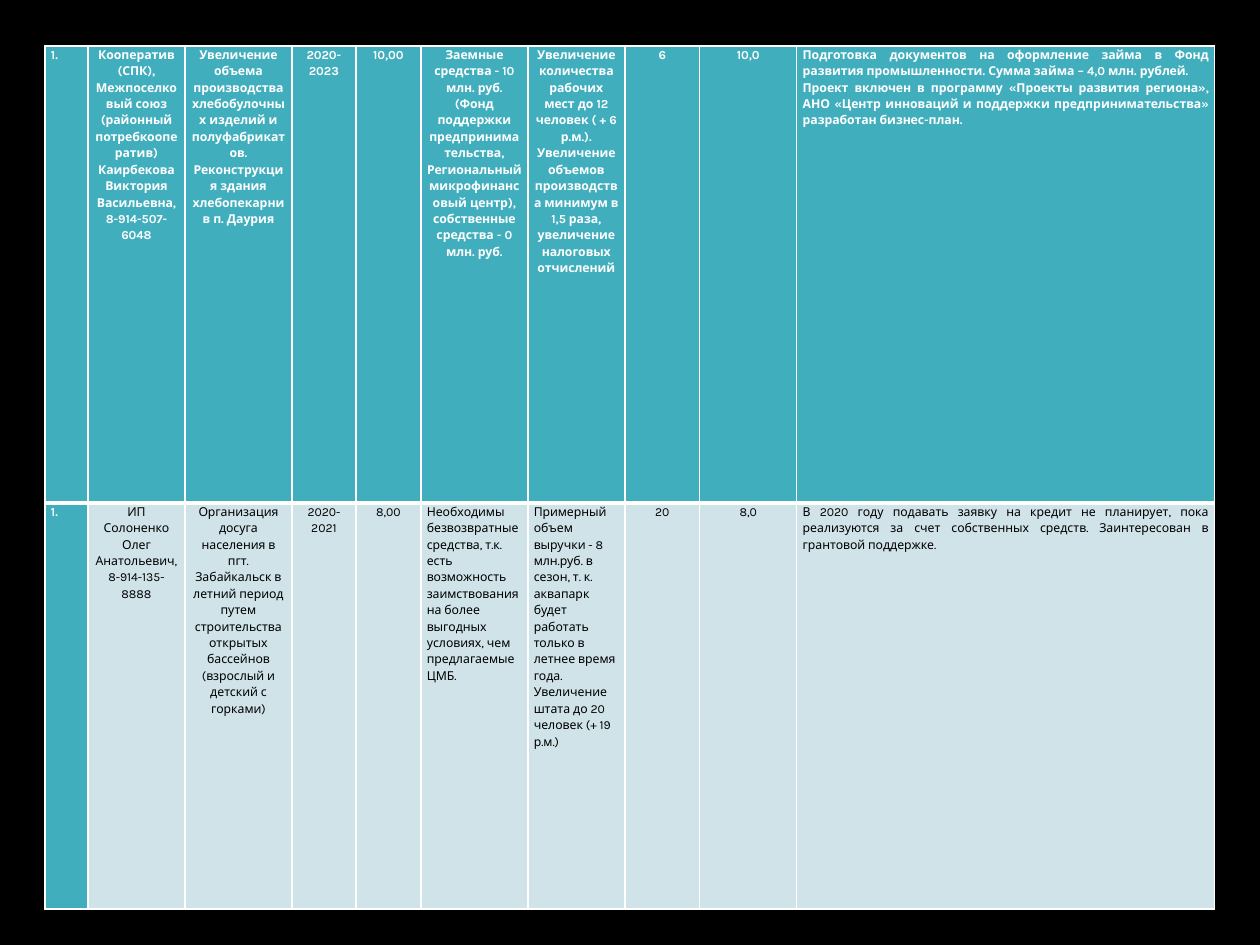
from lxml import etree
from pptx import Presentation, util as u
from pptx.dml.color import RGBColor
from pptx.enum.text import PP_ALIGN
from pptx.oxml.ns import qn

PX = 914400 // 126  # one px in EMU
BLACK = RGBColor(0x00, 0x00, 0x00)
WHITE = RGBColor(0xFF, 0xFF, 0xFF)
TEAL = RGBColor(0x41, 0xAE, 0xBD)
PALE = RGBColor(0xCF, 0xE3, 0xE8)

L, C, J = PP_ALIGN.LEFT, PP_ALIGN.CENTER, PP_ALIGN.JUSTIFY
COLS = [43, 97, 107, 64, 65, 107, 97, 75, 97, 418]
ROWS = [457, 406]

# Each cell: alignment, then its paragraphs; "\n" is a line break
HEAD = [
    (L, "1."),
    (C, "Кооператив (СПК),\nМежпоселковый союз (районный потребкооператив)\n"
        "Каирбекова Виктория Васильевна,\n8-914-507-6048"),
    (C, "Увеличение объема производства хлебобулочных изделий и полуфабрикатов. "
        "Реконструкция здания хлебопекарни в п. Даурия"),
    (C, "2020-2023"),
    (C, "10,00"),
    (C, "Заемные средства - 10 млн. руб. (Фонд поддержки предпринимательства, "
        "Региональный микрофинансовый центр), собственные средства - 0 млн. руб."),
    (C, "Увеличение количества рабочих мест до 12 человек ( + 6 р.м.). "
        "Увеличение объемов производства минимум в 1,5 раза, "
        "увеличение налоговых отчислений"),
    (C, "6"),
    (C, "10,0"),
    (J, "Подготовка документов на оформление займа в Фонд развития "
        "промышленности. Сумма займа – 4,0 млн. рублей.",
        "Проект включен в программу «Проекты развития региона», АНО «Центр "
        "инноваций и поддержки предпринимательства» разработан бизнес-план."),
]
BODY = [
    (L, "1."),
    (C, "ИП Солоненко Олег Анатольевич,\n8-914-135-8888"),
    (C, "Организация досуга населения в пгт. Забайкальск в летний период путем "
        "строительства открытых бассейнов (взрослый и детский с горками)"),
    (C, "2020-2021"),
    (C, "8,00"),
    (L, "Необходимы безвозвратные средства, т.к. есть возможность заимствования "
        "на более выгодных условиях, чем предлагаемые ЦМБ."),
    (L, "Примерный объем выручки - 8 млн.руб. в сезон, т. к. аквапарк будет "
        "работать только в летнее время года. Увеличение штата до 20 человек "
        "(+ 19 р.м.)"),
    (C, "20"),
    (C, "8,0"),
    (J, "В 2020 году подавать заявку на кредит не планирует, пока реализуются "
        "за счет собственных средств. Заинтересован в грантовой поддержке."),
]


def edge(cell, low):
    """White borders on all sides; low is the width of the bottom one."""
    props = cell._tc.get_or_add_tcPr()
    for i, (side, pt) in enumerate(
            [("lnL", 1), ("lnR", 1), ("lnT", 1), ("lnB", low)]):
        line = etree.Element(qn("a:" + side), w=str(u.Pt(pt)))
        fill = etree.SubElement(line, qn("a:solidFill"))
        etree.SubElement(fill, qn("a:srgbClr"), val=str(WHITE))
        props.insert(i, line)


def write(cell, align, paras, color, bold):
    frame = cell.text_frame
    for i, words in enumerate(paras):
        para = frame.add_paragraph() if i else frame.paragraphs[0]
        para.alignment = align
        para.line_spacing = 1.15
        for j, part in enumerate(words.split("\n")):
            if j:
                para.add_line_break()
            run = para.add_run()
            run.text = part
            run.font.name = "Karla"
            run.font.size = u.Pt(7)
            run.font.bold = bold
            run.font.color.rgb = color
        # Line breaks take the same size as the text
        para.font.size = u.Pt(7)


def grid(slide, x, y):
    """Table of projects with its corner at x, y."""
    table = slide.shapes.add_table(
        len(ROWS), len(COLS), x * PX, y * PX,
        sum(COLS) * PX, sum(ROWS) * PX).table
    for col, wide in zip(table.columns, COLS):
        col.width = wide * PX
    for row, high in zip(table.rows, ROWS):
        row.height = high * PX
    for r, cells in enumerate([HEAD, BODY]):
        for c, (align, *paras) in enumerate(cells):
            cell = table.cell(r, c)
            strong = r == 0 or c == 0  # heading row and number column
            cell.margin_left = cell.margin_right = 6 * PX
            cell.margin_top = cell.margin_bottom = 0
            cell.fill.solid()
            cell.fill.fore_color.rgb = TEAL if strong else PALE
            edge(cell, 3 if r == 0 else 1)
            write(cell, align, paras, WHITE if strong else BLACK, strong)


def main():
    deck = Presentation()
    deck.slide_width = u.Inches(10)
    deck.slide_height = u.Inches(7.5)
    slide = deck.slides.add_slide(deck.slide_layouts[6])
    slide.background.fill.solid()
    slide.background.fill.fore_color.rgb = BLACK
    grid(slide, 45, 46)
    deck.save("out.pptx")


if __name__ == "__main__":
    main()
